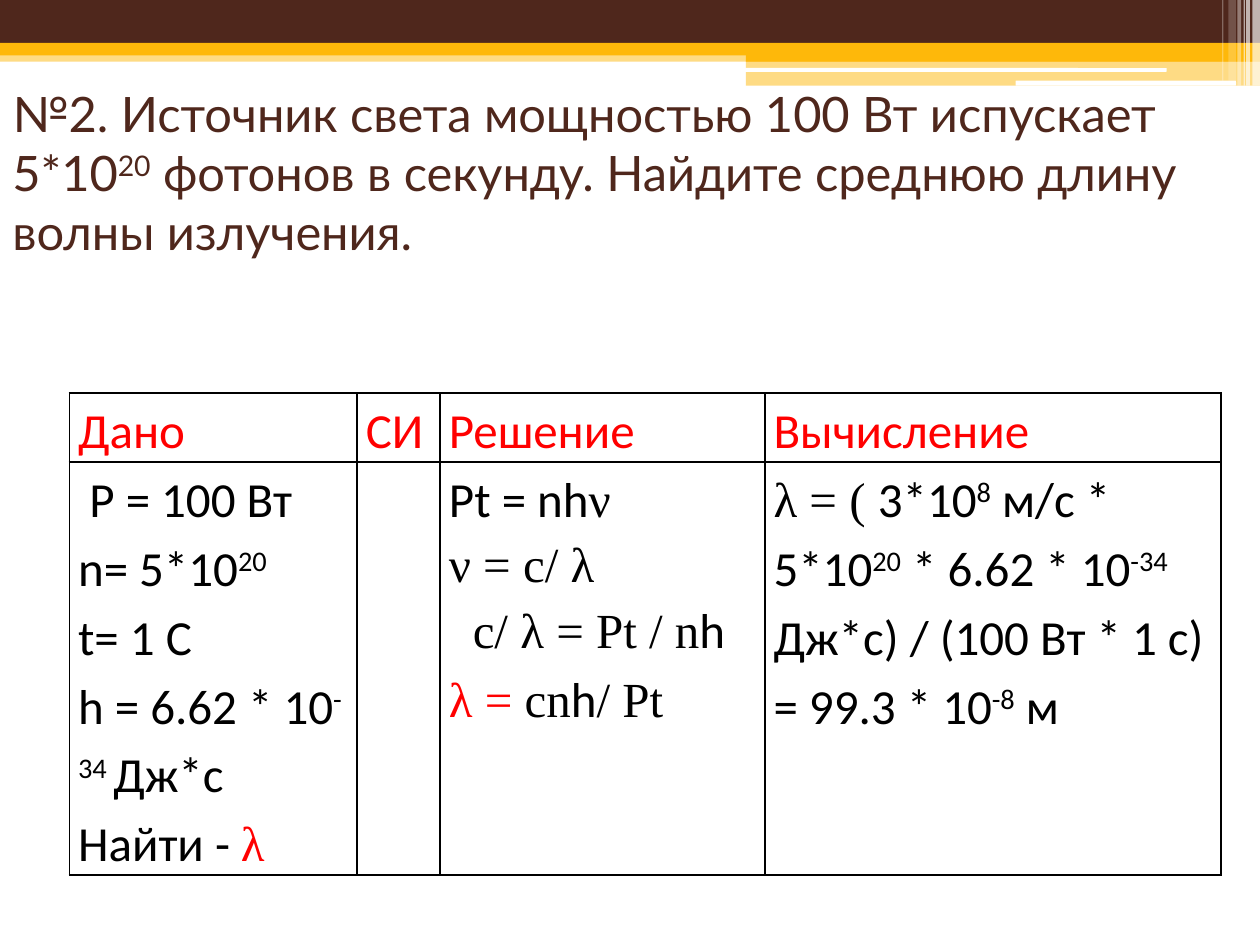
from pptx import Presentation
from pptx.dml.color import RGBColor
from pptx.enum.shapes import MSO_SHAPE
from pptx.enum.text import MSO_ANCHOR
from pptx.oxml.ns import qn
from pptx.util import Inches, Pt
from lxml.etree import SubElement

W, H = 10, 7.5
COLORS = {"brown": "4F271C", "gold": "FEB80A", "white": "FFFFFF",
          "red": "FF0000", "black": "000000"}
TITLE_FONT, SANS, SERIF = "Lato", "Calibri", "Times New Roman"


def rgb(name):
    return RGBColor.from_string(COLORS[name])


def add_bar(s, box, color, alpha=100, kind=MSO_SHAPE.RECTANGLE):
    sp = s.shapes.add_shape(kind, *(Inches(v) for v in box))
    sp.shadow.inherit = False
    sp.fill.solid()
    sp.fill.fore_color.rgb = rgb(color)
    sp.line.fill.background()
    if alpha < 100:
        clr = sp.fill._xPr.find(qn("a:solidFill"))[0]
        SubElement(clr, qn("a:alpha")).set("val", str(alpha * 1000))


def add_run(p, text, font, size, color, raised=False):
    r = p.add_run()
    r.text = text
    r.font.name, r.font.size = font, Pt(size)
    r.font.color.rgb = rgb(color)
    if raised:
        r._r.get_or_add_rPr().set("baseline", "30000")


def add_header(s, box):
    x, y, w, h = box
    half = 0.592 * w  # start of the right-hand bands

    # Full-width bands, then the right-hand bands
    for left, top, height, color, alpha in (
            (0, 0.4, 0.09, "gold", 50), (0, 0, 0.34, "brown", 100),
            (0, 0.34, 0.1, "gold", 100), (half, 0.39, 0.1, "gold", 100),
            (half, 0.48, 0.2, "gold", 50)):
        add_bar(s, (x + left, y + top, w - left, height), color, alpha)

    # White rounded strips
    for left, top, width, height in ((0.591, 0.54, 0.335, 0.03),
                                     (0.806, 0.64, 0.175, 0.04)):
        add_bar(s, (x + left * w, y + top, width * w, height), "white",
                kind=MSO_SHAPE.ROUNDED_RECTANGLE)

    # Translucent stripes, measured from the right edge
    for offset, width, short, alpha in (
            (0.06, 0.06, 0, 65), (0.11, 0.03, 0, 65), (0.13, 0.01, 0, 60),
            (0.18, 0.03, 0, 40), (0.25, 0.06, 0.04, 20),
            (0.3, 0.01, 0.04, 30)):
        add_bar(s, (x + w - offset, y, width, h - short), "white", alpha)


def add_title(s, box):
    tf = s.shapes.add_textbox(*(Inches(v) for v in box)).text_frame
    tf.word_wrap = True
    tf.vertical_anchor = MSO_ANCHOR.MIDDLE
    tf.margin_top, tf.margin_bottom = 0, Inches(0.47)  # one spare line below
    p = tf.paragraphs[0]
    for text, raised in (
            ("№2. Источник света мощностью 100 Вт испускает 5*10", False),
            ("20", True),
            (" фотонов в секунду. Найдите среднюю длину волны излучения.",
             False)):
        add_run(p, text, TITLE_FONT, 27.9, "brown", raised)


def set_borders(cell):
    tc_pr = cell._tc.get_or_add_tcPr()
    for i, side in enumerate(("lnL", "lnR", "lnT", "lnB")):
        ln = tc_pr.makeelement(qn(f"a:{side}"), {"w": str(Pt(1))})
        fill = SubElement(ln, qn("a:solidFill"))
        SubElement(fill, qn("a:srgbClr")).set("val", COLORS["black"])
        tc_pr.insert(i, ln)


def fill_cell(cell, paragraphs):
    cell.fill.background()
    set_borders(cell)
    cell.margin_left = cell.margin_right = Inches(0.07)
    cell.margin_top = cell.margin_bottom = 0
    tf = cell.text_frame
    for i, (indent, runs) in enumerate(paragraphs):
        p = tf.add_paragraph() if i else tf.paragraphs[0]
        p.line_spacing = 1.15
        if indent:
            p._p.get_or_add_pPr().set("marL", str(Inches(indent)))
        for text, font, color, raised in runs:
            add_run(p, text, font, 28, color, raised)


# Kinds of run in the table
def sans(text, color="black"):
    return text, SANS, color, False


def serif(text, color="black"):
    return text, SERIF, color, False


def power(text):
    return text, SANS, "black", True


# Each cell is a list of (indent, runs)
HEADINGS = [[(0, [sans(t, "red")])]
            for t in ("Дано", "СИ", "Решение", "Вычисление")]
GIVEN = [
    (0.09, [sans("Р = 100 Вт")]),
    (0, [sans("n= 5*10"), power("20")]),
    (0, [sans("t= 1 С")]),
    (0, [sans("h = 6.62 * 10"), power("-34 "), sans("Дж*с")]),
    (0, [sans("Найти - "), serif("λ", "red")]),
]
SOLUTION = [
    (0, [sans("Pt = nh"), serif("ν")]),
    (0, [serif("ν = с/ λ")]),
    (0.19, [serif("с/ λ = Pt / n"), sans("h")]),
    (0, [serif("λ = ", "red"), serif("сn"), sans("h"), serif("/ Pt")]),
]
CALCULATION = [
    (0, [serif("λ = ( "), sans("3*10"), power("8"), sans(" м/с * 5*10"),
         power("20"), sans(" * 6.62 * 10"), power("-34 "),
         sans("Дж*с) / (100 Вт * 1 c) = 99.3 * 10"), power("-8"),
         sans(" м")]),
]


def add_solution_table(s, box):
    x, y, w, h = box
    rows = [HEADINGS, [GIVEN, [], SOLUTION, CALCULATION]]
    table = s.shapes.add_table(2, 4, *(Inches(v) for v in box)).table
    table.first_row = table.horz_banding = False
    for column, share in zip(table.columns, (0.25, 0.072, 0.282, 0.396)):
        column.width = Inches(w * share)
    for row, lines in zip(table.rows, (1, 6)):
        row.height = Inches(h * lines / 7)
    for row, contents in zip(table.rows, rows):
        for cell, paragraphs in zip(row.cells, contents):
            fill_cell(cell, paragraphs)


def main():
    prs = Presentation()
    prs.slide_width, prs.slide_height = Inches(W), Inches(H)
    s = prs.slides.add_slide(prs.slide_layouts[6])
    add_header(s, (0, 0, W, 0.68))
    add_title(s, (0, 0.7, 0.967 * W, 0.24 * H))
    add_solution_table(s, (0.055 * W, 0.416 * H, 0.914 * W, 0.51 * H))
    prs.save("out.pptx")


if __name__ == "__main__":
    main()
